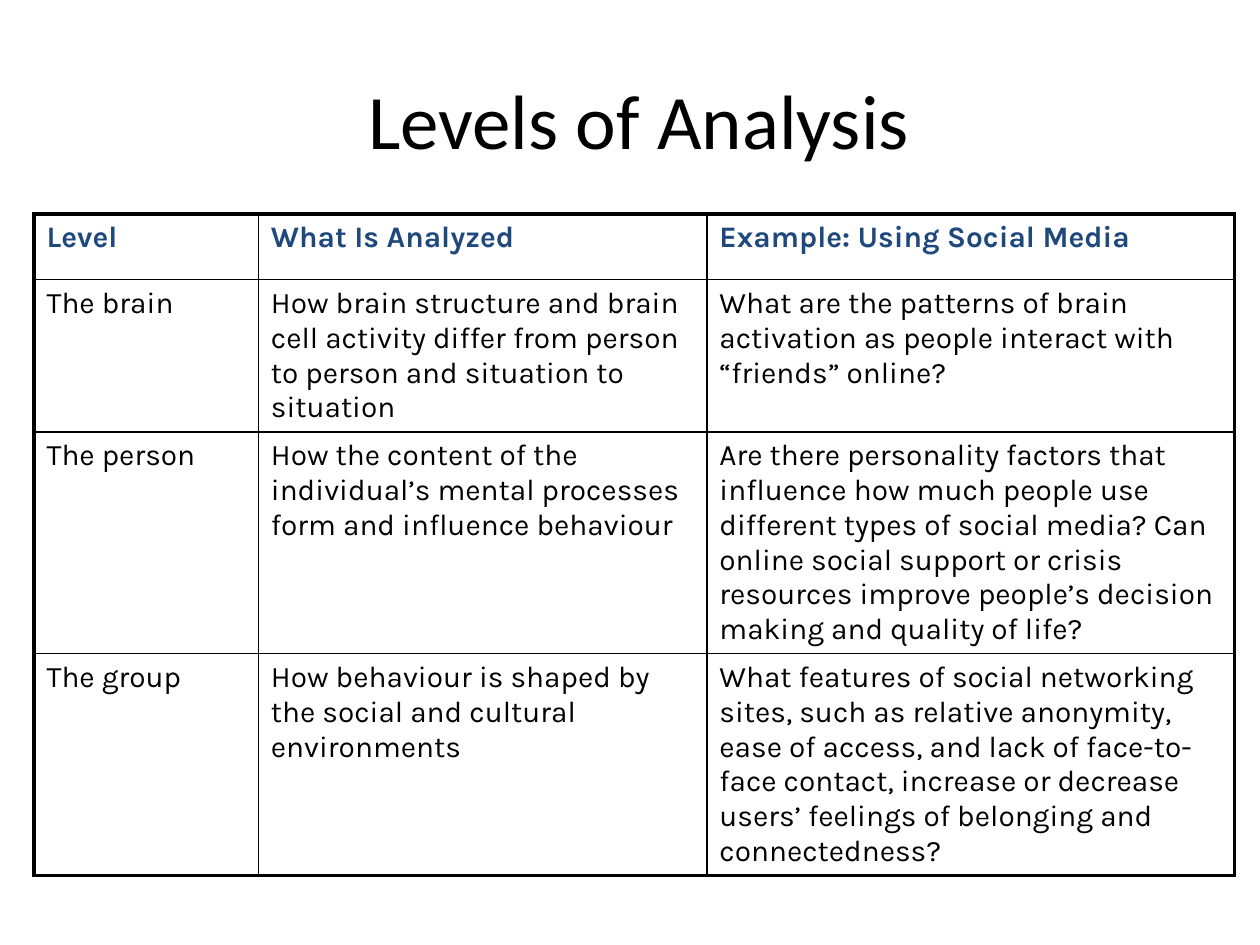
from dataclasses import dataclass

from lxml.etree import SubElement
from pptx import Presentation
from pptx.dml.color import RGBColor
from pptx.enum.text import MSO_ANCHOR, PP_ALIGN
from pptx.oxml.ns import qn
from pptx.util import Inches, Pt

BLACK = "000000"
NAVY = "1F497D"
COLUMN_WIDTHS = (1.78, 3.56, 4.19)
ROW_HEIGHTS = (0.52, 1.16, 1.69, 1.69)
OUTER_LINE = 2.25
INNER_LINE = 1


@dataclass
class Level:
    name: str
    analyzed: str
    example: str

    def texts(self) -> tuple[str, str, str]:
        return self.name, self.analyzed, self.example


LEVELS = [
    Level("Level", "What Is Analyzed", "Example: Using Social Media"),
    Level(
        "The brain",
        "How brain structure and brain cell activity differ from person to person "
        "and situation to situation",
        "What are the patterns of brain activation as people interact with "
        "“friends” online?",
    ),
    Level(
        "The person",
        "How the content of the individual’s mental processes form and influence "
        "behaviour",
        "Are there personality factors that influence how much people use different "
        "types of social media? Can online social support or crisis resources improve "
        "people’s decision making and quality of life?",
    ),
    Level(
        "The group",
        "How behaviour is shaped by the social and cultural environments",
        "What features of social networking sites, such as relative anonymity, ease of "
        "access, and lack of face-to-face contact, increase or decrease users’ feelings "
        "of belonging and connectedness?",
    ),
]


def add_span(para, text: str, font: str, size: float, color: str, bold: bool = False) -> None:
    span = para.add_run()
    span.text = text
    span.font.name = font
    span.font.size = Pt(size)
    span.font.bold = bold
    span.font.color.rgb = RGBColor.from_string(color)


def space_before(para, percent: int) -> None:
    spacing = SubElement(para._p.get_or_add_pPr(), qn("a:spcBef"))
    SubElement(spacing, qn("a:spcPct"), val=str(percent * 1000))


def add_border(cell, side: str, width: float) -> None:
    line = SubElement(cell._tc.get_or_add_tcPr(), qn(f"a:ln{side}"), w=str(Pt(width)))
    fill = SubElement(line, qn("a:solidFill"))
    SubElement(fill, qn("a:srgbClr"), val=BLACK)


def fill_cell(cell, text: str, row: int, column: int) -> None:
    outer_sides = {
        "L": column == 0,
        "R": column == len(COLUMN_WIDTHS) - 1,
        "T": row == 0,
        "B": row == len(ROW_HEIGHTS) - 1,
    }
    for side, is_outer in outer_sides.items():
        add_border(cell, side, OUTER_LINE if is_outer else INNER_LINE)
    cell.fill.background()
    para = cell.text_frame.paragraphs[0]
    space_before(para, 20)
    is_header = row == 0
    add_span(para, text, "Karla", 17, NAVY if is_header else BLACK, is_header)


def add_title(page, text: str) -> None:
    box = page.shapes.title
    box.left, box.top = Inches(0.57), Inches(0.36)
    box.width, box.height = Inches(9), Inches(1.17)
    box.text_frame.vertical_anchor = MSO_ANCHOR.MIDDLE
    para = box.text_frame.paragraphs[0]
    para.alignment = PP_ALIGN.CENTER
    add_span(para, text, "Calibri", 44, BLACK)


def add_levels_table(page, levels: list[Level]) -> None:
    frame = page.shapes.add_table(
        len(levels), len(COLUMN_WIDTHS), Inches(0.27), Inches(1.7),
        Inches(sum(COLUMN_WIDTHS)), Inches(sum(ROW_HEIGHTS)),
    )
    table = frame.table
    table.first_row = False
    table.horz_banding = False
    for column, width in zip(table.columns, COLUMN_WIDTHS):
        column.width = Inches(width)
    for row, height in zip(table.rows, ROW_HEIGHTS):
        row.height = Inches(height)
    for row_index, level in enumerate(levels):
        for column_index, text in enumerate(level.texts()):
            fill_cell(table.cell(row_index, column_index), text, row_index, column_index)


def main() -> None:
    deck = Presentation()
    deck.slide_width, deck.slide_height = Inches(10), Inches(7.5)
    page = deck.slides.add_slide(deck.slide_layouts[5])
    add_title(page, "Levels of Analysis")
    add_levels_table(page, LEVELS)
    deck.save("out.pptx")


if __name__ == "__main__":
    main()
